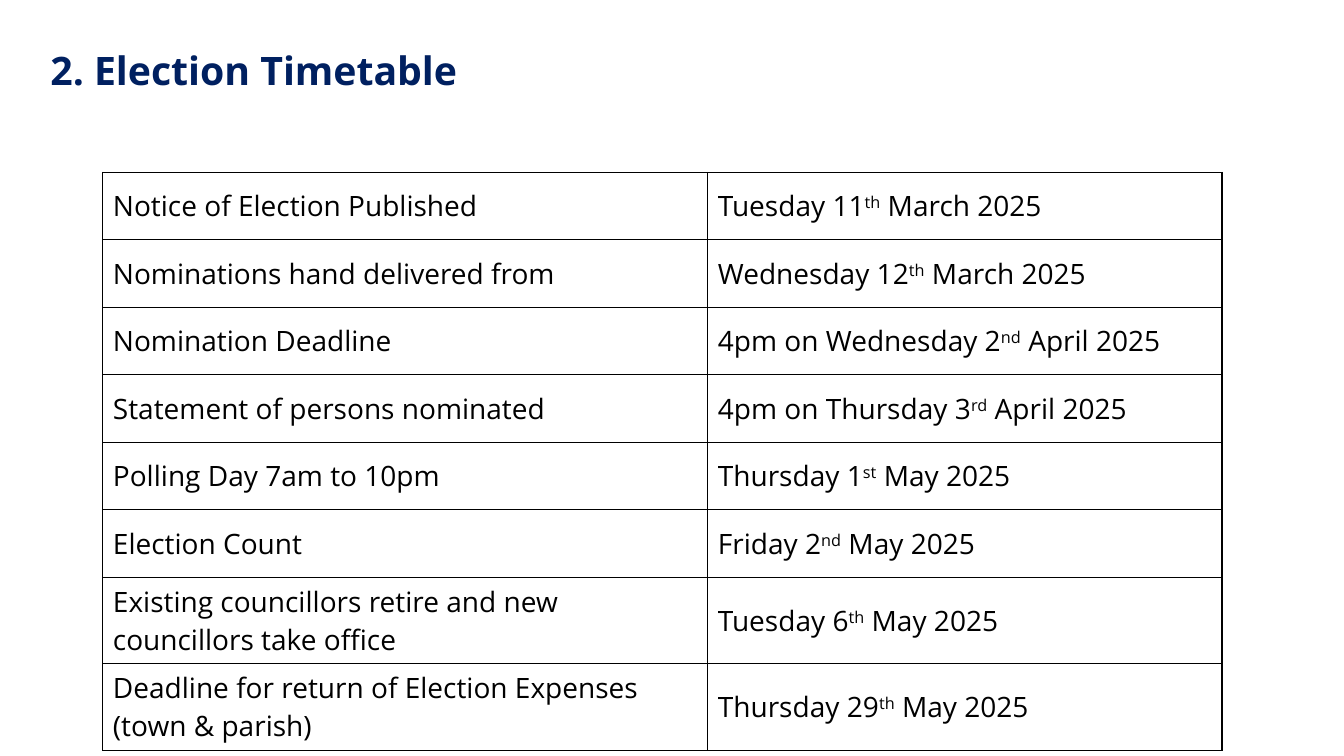
from lxml import etree
from pptx import Presentation
from pptx.dml.color import RGBColor
from pptx.enum.text import MSO_ANCHOR, PP_ALIGN
from pptx.oxml.ns import qn
from pptx.util import Inches, Pt

MIDDLE = MSO_ANCHOR.MIDDLE
LEFT = PP_ALIGN.LEFT
FONT = "Open Sans"
COLORS = {"title": "002060", "text": "000000", "border": "000000"}
TITLE_ONLY_LAYOUT = 5

# Event, then the date split around its raised ordinal ending
TIMETABLE = [
    ("Notice of Election Published", "Tuesday 11", "th", " March 2025"),
    ("Nominations hand delivered from", "Wednesday 12", "th", " March 2025"),
    ("Nomination Deadline", "4pm on Wednesday 2", "nd", " April 2025"),
    ("Statement of persons nominated", "4pm on Thursday 3", "rd", " April 2025"),
    ("Polling Day 7am to 10pm", "Thursday 1", "st", " May 2025"),
    ("Election Count", "Friday 2", "nd", " May 2025"),
    ("Existing councillors retire and new councillors take office",
     "Tuesday 6", "th", " May 2025"),
    ("Deadline for return of Election Expenses (town & parish)",
     "Thursday 29", "th", " May 2025"),
]
COLUMN_WIDTHS = [6, 5.1]
ROW_HEIGHT = 0.67
LAST_ROW_HEIGHT = 0.7


def add_run(paragraph, text, size, color, bold=False):
    run = paragraph.add_run()
    run.text = text
    run.font.name = FONT
    run.font.size = Pt(size)
    run.font.bold = bold
    run.font.color.rgb = RGBColor.from_string(COLORS[color])
    return run


def add_borders(cell):
    properties = cell._tc.get_or_add_tcPr()
    for position, side in enumerate(("a:lnL", "a:lnR", "a:lnT", "a:lnB")):
        line = etree.Element(qn(side), w=str(Pt(1)))
        fill = etree.SubElement(line, qn("a:solidFill"))
        etree.SubElement(fill, qn("a:srgbClr"), val=COLORS["border"])
        properties.insert(position, line)


presentation = Presentation()
presentation.slide_width = Inches(13.33)
presentation.slide_height = Inches(7.5)
slide = presentation.slides.add_slide(presentation.slide_layouts[TITLE_ONLY_LAYOUT])

# Title
title = slide.shapes.title
title.left, title.top = Inches(0.4), Inches(0)
title.width, title.height = Inches(11.5), Inches(1.45)
title.text_frame.vertical_anchor = MIDDLE
title.text_frame.word_wrap = True
paragraph = title.text_frame.paragraphs[0]
paragraph.alignment = LEFT
paragraph.line_spacing = 0.9
add_run(paragraph, "2. Election Timetable", 28, "title", bold=True)

# Timetable grid
table_height = ROW_HEIGHT * (len(TIMETABLE) - 1) + LAST_ROW_HEIGHT
table = slide.shapes.add_table(
    len(TIMETABLE), len(COLUMN_WIDTHS), Inches(1.02), Inches(1.71),
    Inches(sum(COLUMN_WIDTHS)), Inches(table_height)).table
table.first_row = False
table.horz_banding = False
for column, width in zip(table.columns, COLUMN_WIDTHS):
    column.width = Inches(width)
for row in table.rows:
    row.height = Inches(ROW_HEIGHT)
table.rows[len(TIMETABLE) - 1].height = Inches(LAST_ROW_HEIGHT)

# Timetable entries
for row, (event, day, ordinal, month) in zip(table.rows, TIMETABLE):
    event_cell, date_cell = row.cells
    for cell in (event_cell, date_cell):
        cell.vertical_anchor = MIDDLE
        cell.fill.background()
        add_borders(cell)
    add_run(event_cell.text_frame.paragraphs[0], event, 20, "text")
    date = date_cell.text_frame.paragraphs[0]
    add_run(date, day, 20, "text")
    ending = add_run(date, ordinal, 20, "text")
    ending.font._element.set("baseline", "30000")
    add_run(date, month, 20, "text")

presentation.save("out.pptx")
